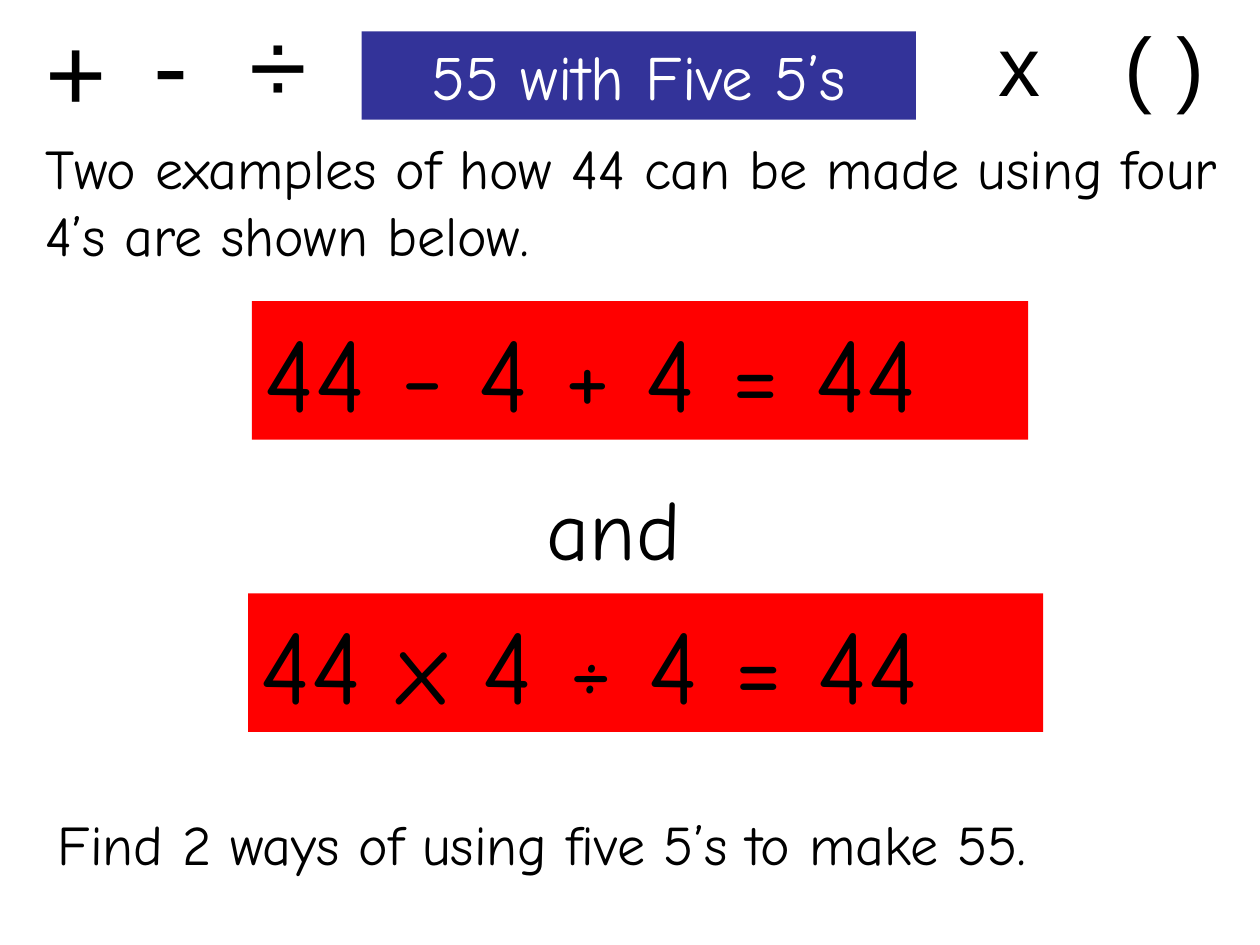
from pptx import Presentation
from pptx.dml.color import RGBColor
from pptx.enum.shapes import MSO_SHAPE
from pptx.enum.text import MSO_ANCHOR, PP_ALIGN
from pptx.util import Inches, Pt

RECT = MSO_SHAPE.RECTANGLE
TOP, MIDDLE = MSO_ANCHOR.TOP, MSO_ANCHOR.MIDDLE
LEFT, CENTER = PP_ALIGN.LEFT, PP_ALIGN.CENTER

THEME = {
    "hand": "Comic Neue", "sans": "Arial",
    "ink": RGBColor(0, 0, 0), "white": RGBColor(255, 255, 255),
    "red": RGBColor(255, 0, 0), "blue": RGBColor(0x33, 0x33, 0x99),
    "body": 32, "title": 36, "large": 48, "huge": 60,
}

# Content: text, (left, top, width, height), size
TITLE = ("55 with Five 5’s", (2.87, 0.25, 4.4, 0.7), "title")
SUMS = [
    ("44 - 4 + 4 = 44", (2, 2.39, 6.16, 1.1), "huge"),
    ("44 x 4 ÷ 4 = 44", (1.97, 4.71, 6.31, 1.1), "huge"),
]
JOIN = ("and", (4.24, 3.73, 1.63, 0.9), "large")
NOTES = [
    ("Two examples of how 44 can be made using four 4’s are shown below.",
     (0.26, 1.01, 9.78, 1.17), "body"),
    ("Find 2 ways of using five 5’s to make 55.",
     (0.36, 6.38, 8.95, 0.63), "body"),
]
# Signs: text, left, top, size
SIGNS = [
    ("+", 0.26, 0, "huge"),
    ("-", 1.12, -0.06, "huge"),
    ("÷", 1.88, -0.05, "huge"),
    ("x", 7.83, 0.05, "large"),
    ("( )", 8.83, 0.06, "large"),
]
SIGN_W = 0.95
SIGN_H = {"huge": 1.1, "large": 0.9}


def add_text(slide, item, fill=None, color="ink", face="hand",
             anchor=TOP, align=LEFT):
    """Add a text box, or a filled rectangle when a fill is named."""
    text, place, size = item
    box = [Inches(n) for n in place]
    if fill:
        shape = slide.shapes.add_shape(RECT, *box)
        shape.shadow.inherit = False
        shape.fill.solid()
        shape.fill.fore_color.rgb = THEME[fill]
        shape.line.fill.background()
    else:
        shape = slide.shapes.add_textbox(*box)
    frame = shape.text_frame
    frame.text = text
    frame.word_wrap = True
    frame.vertical_anchor = anchor
    para = frame.paragraphs[0]
    para.alignment = align
    font = para.runs[0].font
    font.name = THEME[face]
    font.size = Pt(THEME[size])
    font.color.rgb = THEME[color]


def main():
    prs = Presentation()
    prs.slide_width, prs.slide_height = Inches(10), Inches(7.5)
    slide = prs.slides.add_slide(prs.slide_layouts[6])

    # Worked examples
    for item in SUMS:
        add_text(slide, item, fill="red", anchor=MIDDLE)
    add_text(slide, JOIN)

    # Instructions
    for item in NOTES:
        add_text(slide, item, anchor=MIDDLE)

    # Title banner
    add_text(slide, TITLE, fill="blue", color="white", align=CENTER)

    # Operation signs
    for text, left, top, size in SIGNS:
        place = (left, top, SIGN_W, SIGN_H[size])
        add_text(slide, (text, place, size), face="sans")

    prs.save("out.pptx")


if __name__ == "__main__":
    main()
